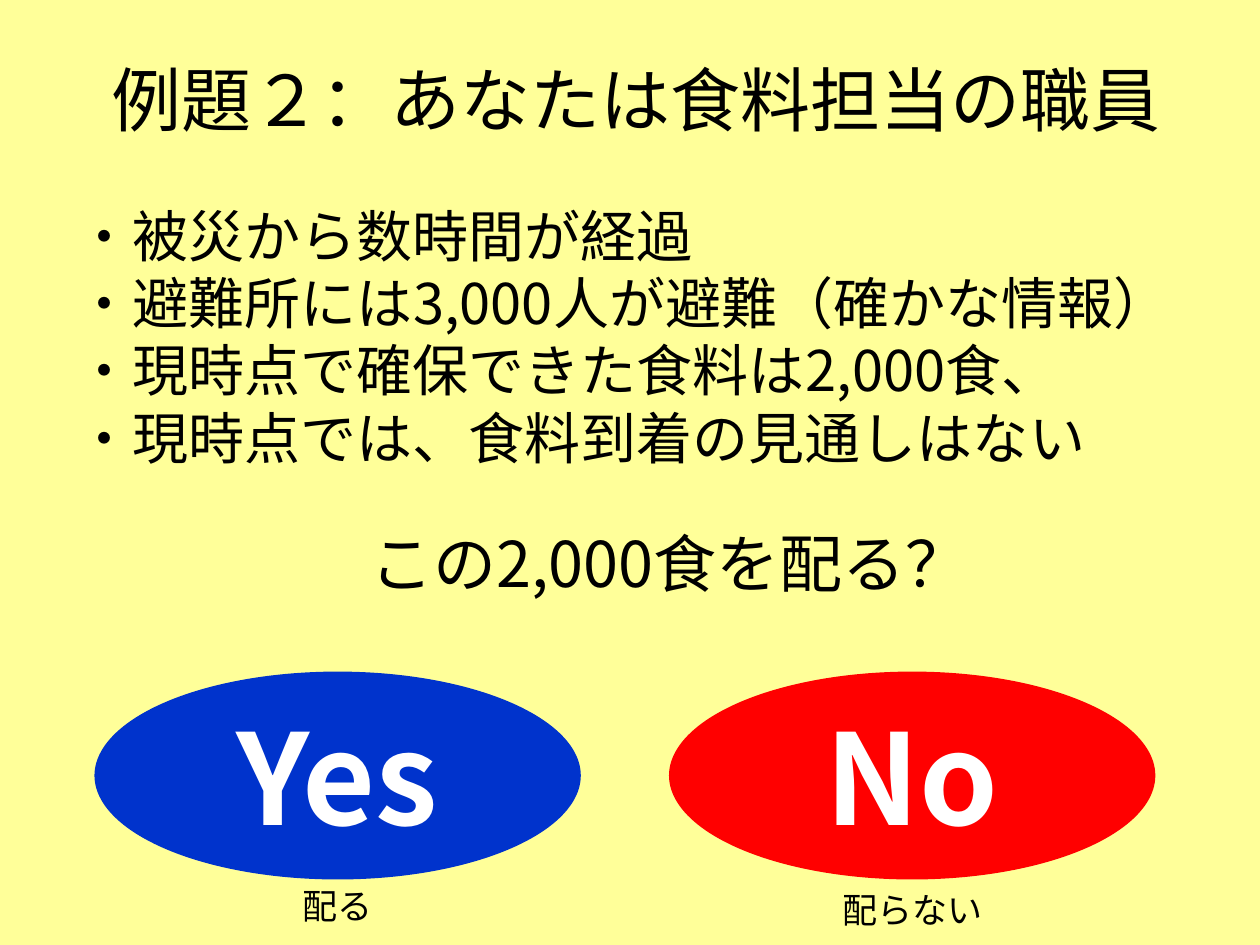
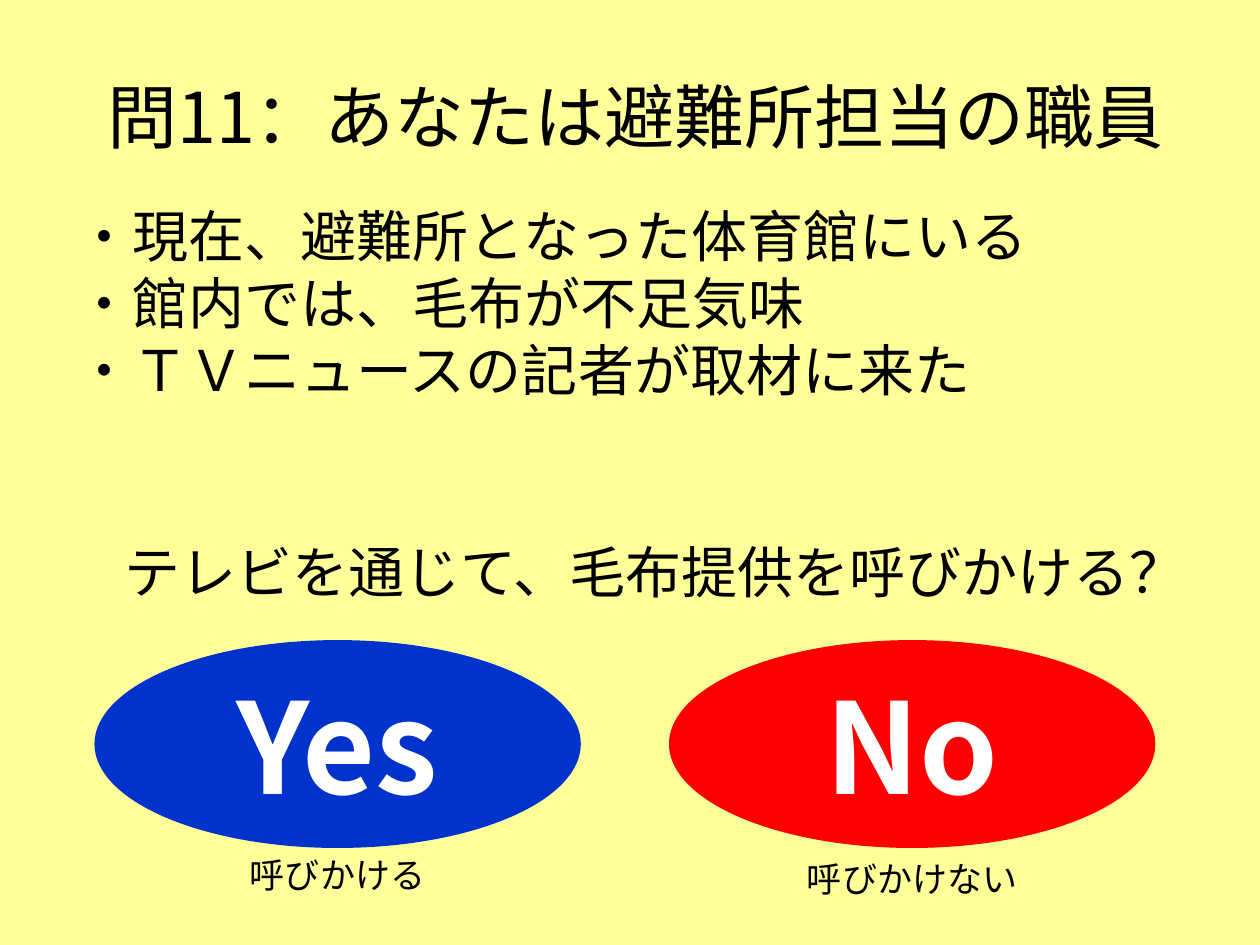
from lxml.etree import SubElement
from pptx import Presentation
from pptx.dml.color import RGBColor
from pptx.enum.shapes import MSO_SHAPE
from pptx.enum.text import MSO_ANCHOR, MSO_AUTO_SIZE, PP_ALIGN
from pptx.oxml.ns import qn
from pptx.util import Inches, Pt

FONT = "Noto Sans CJK JP"
COLORS = {
    "back": "FFFF99",
    "text": "000000",
    "yes": "0033CC",
    "no": "FF0000",
    "light": "FFFFFF",
}


def color(name):
    return RGBColor.from_string(COLORS[name])


def write(frame, lines, size=32, hue="text", bold=False,
          align=PP_ALIGN.CENTER, anchor=MSO_ANCHOR.MIDDLE, pitch=None):
    """Fill a text frame, one paragraph per line; pitch is in points."""
    frame.word_wrap = True
    frame.auto_size = MSO_AUTO_SIZE.NONE
    frame.vertical_anchor = anchor
    for i, line in enumerate(lines):
        para = frame.add_paragraph() if i else frame.paragraphs[0]
        para.alignment = align
        para.space_before = para.space_after = Pt(0)
        if pitch:
            para.line_spacing = Pt(pitch)
        run = para.add_run()
        run.text = line
        font = run.font
        font.name, font.size, font.bold = FONT, Pt(size), bold
        font.color.rgb = color(hue)
        # East Asian text takes its typeface from a separate element
        SubElement(font._element, qn("a:ea"), typeface=FONT)


class Deck:
    def __init__(self):
        self.file = Presentation()
        self.file.slide_width = Inches(10)
        self.file.slide_height = Inches(7.5)
        self.slide = None

    def start(self, title, top):
        self.slide = self.file.slides.add_slide(self.file.slide_layouts[5])
        fill = self.slide.background.fill
        fill.solid()
        fill.fore_color.rgb = color("back")
        head = self.slide.shapes.title
        head.left, head.top = Inches(0.28), Inches(top)
        head.width, head.height = Inches(9.53), Inches(0.79)
        write(head.text_frame, [title], size=40)

    def text(self, box, lines, **style):
        shape = self.slide.shapes.add_textbox(*map(Inches, box))
        write(shape.text_frame, lines, **style)

    def facts(self, lines, height):
        self.text((0.51, 1.55, 8.98, height), lines, pitch=38.4,
                  align=PP_ALIGN.LEFT, anchor=MSO_ANCHOR.TOP)

    def oval(self, box, label, hue):
        shape = self.slide.shapes.add_shape(MSO_SHAPE.OVAL, *map(Inches, box))
        shape.shadow.inherit = False
        shape.fill.solid()
        shape.fill.fore_color.rgb = color(hue)
        shape.line.fill.background()
        write(shape.text_frame, [label], size=72, hue="light", bold=True)

    def choices(self, top, yes, no):
        """Draw the two answer ovals, each with its meaning below."""
        answers = (
            (0.75, "Yes", "yes", yes, 1.62),
            (5.31, "No", "no", no, 1.65),
        )
        for left, label, hue, note, drop in answers:
            self.oval((left, top, 3.86, 1.65), label, hue)
            self.text((left + 0.03, top + drop, 3.8, 0.48), [note], size=20)


def main():
    deck = Deck()

    deck.start("例題２：あなたは食料担当の職員", 0.39)
    deck.facts([
        "・被災から数時間が経過",
        "・避難所には3,000人が避難（確かな情報）",
        "・現時点で確保できた食料は2,000食、",
        "・現時点では、食料到着の見通しはない",
    ], 2.44)
    deck.choices(5.33, "配る", "配らない")
    deck.text((2.54, 3.99, 5.55, 0.94), ["この2,000食を配る？"], size=36)

    deck.start("問11：あなたは避難所担当の職員", 0.52)
    deck.facts([
        "・現在、避難所となった体育館にいる",
        "・館内では、毛布が不足気味",
        "・ＴＶニュースの記者が取材に来た",
    ], 1.89)
    deck.choices(5.08, "呼びかける", "呼びかけない")
    deck.text((0.78, 4.13, 8.4, 0.8),
              ["テレビを通じて、毛布提供を呼びかける？"], pitch=38.4)

    deck.file.save("out.pptx")


if __name__ == "__main__":
    main()
